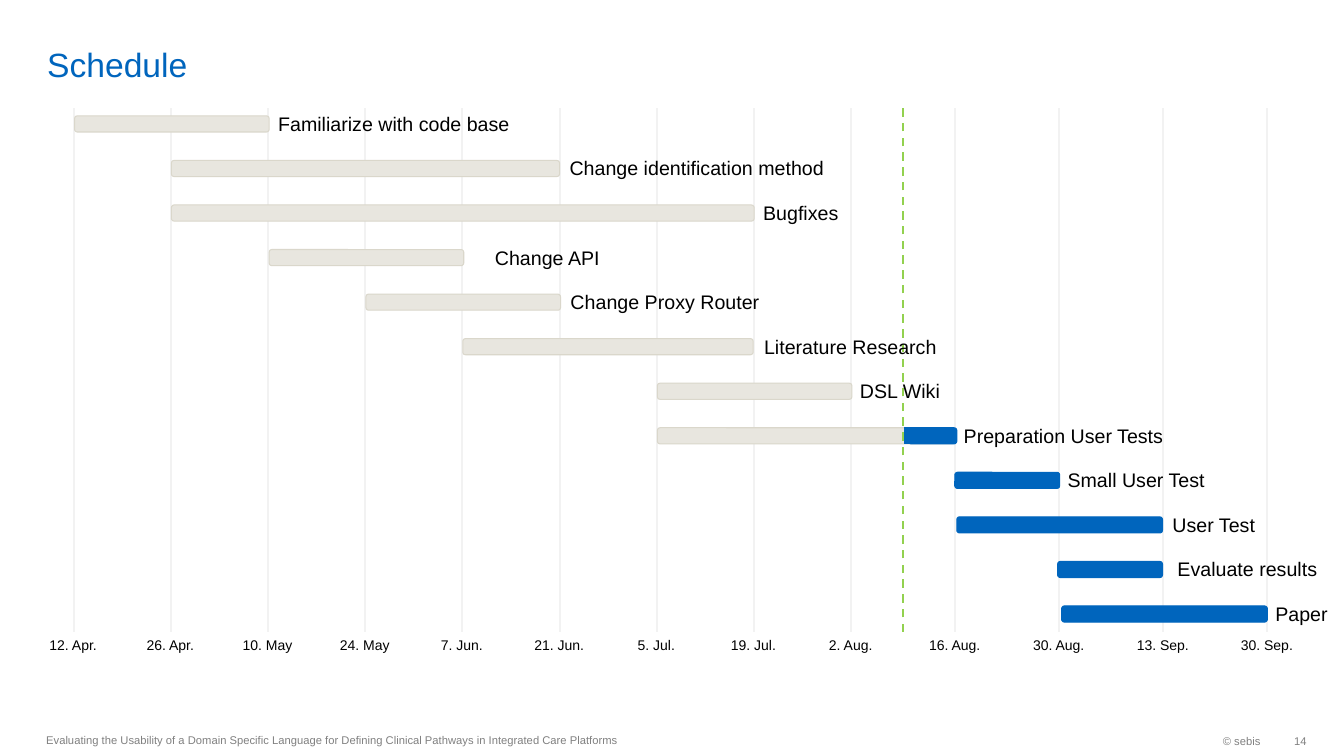
from lxml import etree
from pptx import Presentation
from pptx.dml.color import RGBColor
from pptx.enum.dml import MSO_LINE
from pptx.enum.shapes import MSO_CONNECTOR, MSO_SHAPE
from pptx.enum.text import MSO_ANCHOR, PP_ALIGN
from pptx.oxml.ns import qn
from pptx.util import Inches, Pt

STRAIGHT = MSO_CONNECTOR.STRAIGHT
DASH = MSO_LINE.DASH
ROUNDED, RECTANGLE = MSO_SHAPE.ROUNDED_RECTANGLE, MSO_SHAPE.RECTANGLE
TOP, MIDDLE, BOTTOM = MSO_ANCHOR.TOP, MSO_ANCHOR.MIDDLE, MSO_ANCHOR.BOTTOM
LEFT, CENTER, RIGHT = PP_ALIGN.LEFT, PP_ALIGN.CENTER, PP_ALIGN.RIGHT

BLUE = RGBColor(0x00, 0x65, 0xBD)
BLACK = RGBColor(0x00, 0x00, 0x00)
GRAY = RGBColor(0x80, 0x80, 0x80)
GRID = RGBColor(0xF2, 0xF2, 0xF2)
GREEN = RGBColor(0x92, 0xD1, 0x4F)
DONE_FILL = RGBColor(0xE8, 0xE6, 0xDF)
DONE_LINE = RGBColor(0xDA, 0xD7, 0xCB)

SLIDE_WIDTH = 13.33
CHART_TOP, CHART_BOTTOM = 1.07, 6.27
FIRST_BAR_TOP, ROW_PITCH, BAR_HEIGHT = 1.15, 0.442, 0.16
TODAY = 8.96

presentation = Presentation()
presentation.slide_width = Inches(SLIDE_WIDTH)
presentation.slide_height = Inches(7.5)
slide = presentation.slides.add_slide(presentation.slide_layouts[6])


def add_text(text, left, top, width, height, size, color, align=LEFT, anchor=TOP):
    box = slide.shapes.add_textbox(Inches(left), Inches(top), Inches(width), Inches(height))
    frame = box.text_frame
    frame.word_wrap = True
    frame.vertical_anchor = anchor
    paragraph = frame.paragraphs[0]
    paragraph.text = text
    paragraph.alignment = align
    paragraph.font.name = "Arial"
    paragraph.font.size = Pt(size)
    paragraph.font.color.rgb = color
    return frame


def add_vertical_line(x, color, width):
    line = slide.shapes.add_connector(
        STRAIGHT, Inches(x), Inches(CHART_BOTTOM), Inches(x), Inches(CHART_TOP))
    line.line.color.rgb = color
    line.line.width = Pt(width)
    etree.SubElement(line._element.spPr, qn("a:effectLst"))
    return line


title = add_text("Schedule", 0.37, 0.05, 11.58, 0.79, 24, BLUE, anchor=BOTTOM)
title.margin_top = title.margin_bottom = 0
add_text("© sebis", 10.26, 7.19, 2.34, 0.32, 8, GRAY, RIGHT, MIDDLE)
add_text("Evaluating the Usability of a Domain Specific Language for Defining "
         "Clinical Pathways in Integrated Care Platforms",
         0.36, 7.18, 6.3, 0.32, 8, GRAY, anchor=MIDDLE)
page_number = add_text("14", 12.6, 7.19, 0.36, 0.32, 8, GRAY, RIGHT, MIDDLE)
page_number.margin_right = 0

dates = ["12. Apr.", "26. Apr.", "10. May", "24. May", "7. Jun.", "21. Jun.", "5. Jul.",
         "19. Jul.", "2. Aug.", "16. Aug.", "30. Aug.", "13. Sep.", "30. Sep."]
for index, date in enumerate(dates):
    x = 0.73 + 0.964 * min(index, 8) + 1.032 * max(index - 8, 0)
    add_vertical_line(x, GRID, 1.35)
    add_text(date, x - 0.4, CHART_BOTTOM, 0.79, 0.27, 10, BLACK, CENTER)

tasks = [
    ("Familiarize with code base", 2.66, [(0.74, 1.93, ROUNDED, True)]),
    ("Change identification method", 5.55, [(1.7, 3.85, ROUNDED, True)]),
    ("Bugfixes", 7.47, [(1.7, 5.78, ROUNDED, True)]),
    ("Change API", 4.81, [(2.67, 1.93, ROUNDED, True)]),
    ("Change Proxy Router", 5.56, [(3.63, 1.93, ROUNDED, True)]),
    ("Literature Research", 7.48, [(4.59, 2.88, ROUNDED, True)]),
    ("DSL Wiki", 8.43, [(6.52, 1.93, ROUNDED, True)]),
    ("Preparation User Tests", 9.46, [(6.52, 2.95, ROUNDED, True),
                                      (9.01, 0.48, ROUNDED, False),
                                      (8.97, 0.43, RECTANGLE, False)]),
    ("Small User Test", 10.49, [(9.47, 1.04, ROUNDED, False)]),
    ("User Test", 11.53, [(9.49, 2.04, ROUNDED, False)]),
    ("Evaluate results", 11.58, [(10.49, 1.04, ROUNDED, False)]),
    ("Paper", 12.55, [(10.53, 2.04, ROUNDED, False)]),
]
for row, (task, label_left, bars) in enumerate(tasks):
    bar_top = FIRST_BAR_TOP + row * ROW_PITCH
    for left, width, outline, done in bars:
        bar = slide.shapes.add_shape(
            outline, Inches(left), Inches(bar_top), Inches(width), Inches(BAR_HEIGHT))
        bar.shadow.inherit = False
        bar.fill.solid()
        bar.fill.fore_color.rgb = DONE_FILL if done else BLUE
        bar.line.color.rgb = DONE_LINE if done else BLUE
        bar.line.width = Pt(0.75)

today_line = add_vertical_line(TODAY, GREEN, 1.5)
today_line.line.dash_style = DASH

for row, (task, label_left, bars) in enumerate(tasks):
    label_top = FIRST_BAR_TOP + row * ROW_PITCH - 0.09
    label_width = min(2.88, SLIDE_WIDTH - label_left)
    add_text(task, label_left, label_top, label_width, 0.34, 14, BLACK)

presentation.save("out.pptx")
